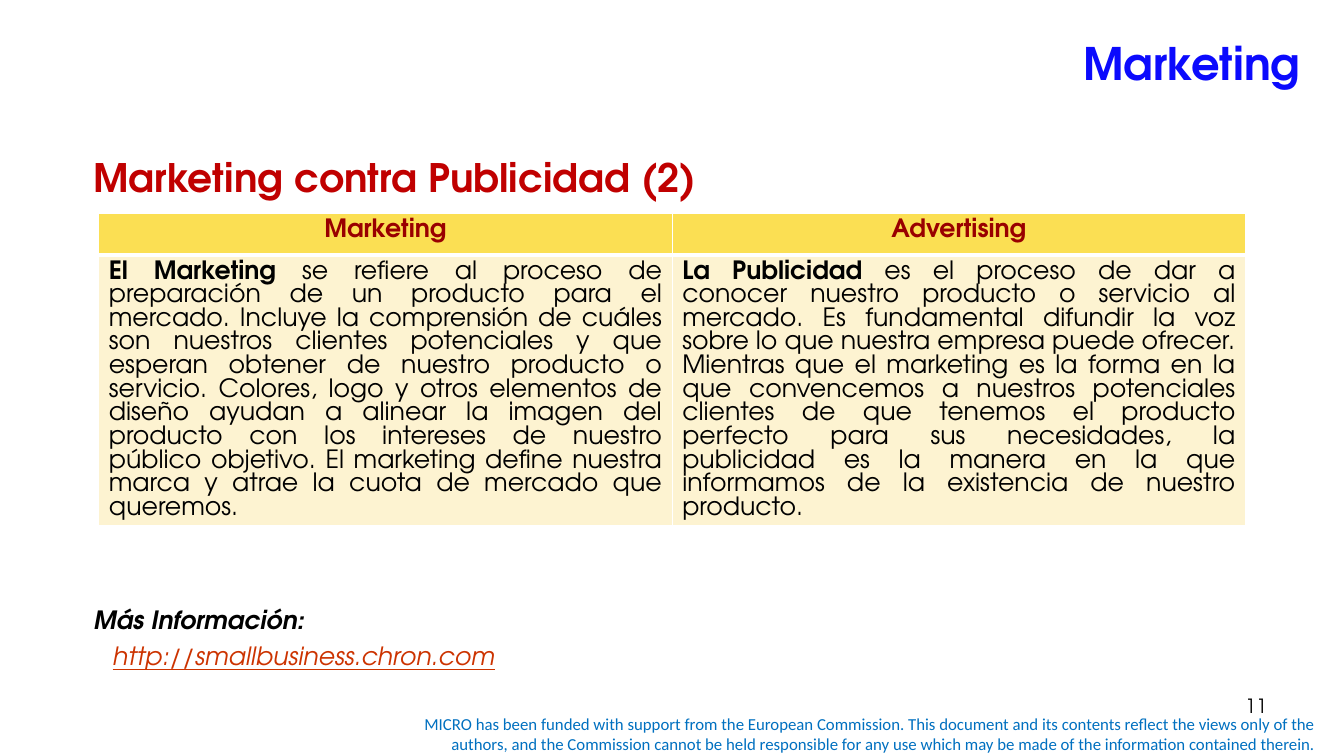
from lxml.etree import SubElement
from pptx import Presentation
from pptx.dml.color import RGBColor
from pptx.enum.text import MSO_ANCHOR as Anchor, PP_ALIGN as Align
from pptx.oxml.ns import qn
from pptx.util import Cm, Pt

BODY_FONT = "TeX Gyre Adventor"
COLUMNS = [
    ("Marketing", "El Marketing",
     " se refiere al proceso de preparación de un producto para el mercado. "
     "Incluye la comprensión de cuáles son nuestros clientes potenciales y que "
     "esperan obtener de nuestro producto o servicio. Colores, logo y otros "
     "elementos de diseño ayudan a alinear la imagen del producto con los "
     "intereses de nuestro público objetivo. El marketing define nuestra marca "
     "y atrae la cuota de mercado que queremos."),
    ("Advertising", "La Publicidad",
     " es el proceso de dar a conocer nuestro producto o servicio al mercado. "
     "Es fundamental difundir la voz sobre lo que nuestra empresa puede ofrecer. "
     "Mientras que el marketing es la forma en la que convencemos a nuestros "
     "potenciales clientes de que tenemos el producto perfecto para sus "
     "necesidades, la publicidad es la manera en la que informamos de la "
     "existencia de nuestro producto."),
]
FUNDING = (
    "MICRO has been funded with support from the European Commission. This "
    "document and its contents reflect the views only of the authors, and the "
    "Commission cannot be held responsible for any use which may be made of the "
    "information contained therein.")


def rgb(hex_color):
    """Turn a hex string into a colour."""
    return RGBColor.from_string(hex_color)


def style(font, size, color, name=BODY_FONT, **flags):
    """Set size, colour, typeface and flags such as bold on a font."""
    font.size, font.name = Pt(size), name
    font.color.rgb = rgb(color)
    for flag, value in flags.items():
        setattr(font, flag, value)


def add_text(slide, place, text, size, color, align=Align.LEFT,
             anchor=Anchor.TOP, **flags):
    """Add a wrapped one-paragraph text box and return its frame."""
    frame = slide.shapes.add_textbox(*map(Cm, place)).text_frame
    frame.word_wrap = True
    frame.vertical_anchor = anchor
    line = frame.paragraphs[0]
    line.text, line.alignment = text, align
    style(line.font, size, color, **flags)
    return frame


def add_borders(cell, widths):
    """Draw white cell borders, given side and width in points."""
    properties = cell._tc.get_or_add_tcPr()
    for side, width in widths.items():
        border = SubElement(properties, qn(f"a:ln{side}"), w=str(Pt(width)))
        fill = SubElement(border, qn("a:solidFill"))
        SubElement(fill, qn("a:srgbClr"), val="FFFFFF")


def fill_cell(cell, parts, fill, color, align, anchor, rule_above, rule_below):
    """Write (text, bold) parts into a cell with its fill and borders."""
    add_borders(cell, {"L": 1, "R": 1, "T": rule_above, "B": rule_below})
    cell.fill.solid()
    cell.fill.fore_color.rgb = rgb(fill)
    cell.vertical_anchor = anchor
    line = cell.text_frame.paragraphs[0]
    line.alignment, line.line_spacing = align, Pt(16.9)
    style(line.font, 18, color)
    for text, bold in parts:
        run = line.add_run()
        run.text = text
        run.font.bold = bold


def add_comparison(slide):
    """Add the table that sets marketing against advertising."""
    table = slide.shapes.add_table(
        2, len(COLUMNS), Cm(2.49), Cm(5.39), Cm(28.9), Cm(7.82)).table
    table.rows[0].height, table.rows[1].height = Cm(1.04), Cm(6.78)
    for index, (heading, term, definition) in enumerate(COLUMNS):
        fill_cell(table.cell(0, index), [(heading, True)], "FBDF53", "990000",
                  Align.CENTER, Anchor.TOP, 1, 3)
        fill_cell(table.cell(1, index), [(term, True), (definition, False)],
                  "FDF3D1", "000000", Align.JUSTIFY, Anchor.MIDDLE, 3, 1)


def add_more_information(slide):
    """Add the closing reference with its indented address."""
    frame = add_text(slide, (2.11, 15.1, 30.48, 2.3), "Más Información:", 18,
                     "000000", bold=True, italic=True)
    address = frame.add_paragraph()
    address.text = "http://smallbusiness.chron.com"
    address.space_before = Pt(4.3)
    address._p.get_or_add_pPr().set("marL", str(Cm(0.48)))
    style(address.font, 18, "CC3300", italic=True, underline=True)


def main():
    """Build the slide and save it."""
    deck = Presentation()
    deck.slide_width, deck.slide_height = Cm(33.87), Cm(19.05)
    slide = deck.slides.add_slide(deck.slide_layouts[6])
    add_text(slide, (9.53, 17.86, 23.88, 1.27), FUNDING, 12, "0070C0",
             Align.RIGHT, Anchor.MIDDLE, name="Calibri")
    title = add_text(slide, (2.9, 0, 30.48, 3.18), "Marketing", 32, "0B0AFD",
                     Align.RIGHT, Anchor.MIDDLE, bold=True)
    title.margin_right = Cm(0.6)
    add_text(slide, (24.28, 17.35, 7.9, 1.32), "11", 14, "000000", Align.RIGHT)
    add_text(slide, (2.11, 3.73, 30.48, 1.5), "Marketing contra Publicidad (2)",
             28, "C00000", bold=True)
    add_more_information(slide)
    add_comparison(slide)
    deck.save("out.pptx")


if __name__ == "__main__":
    main()
